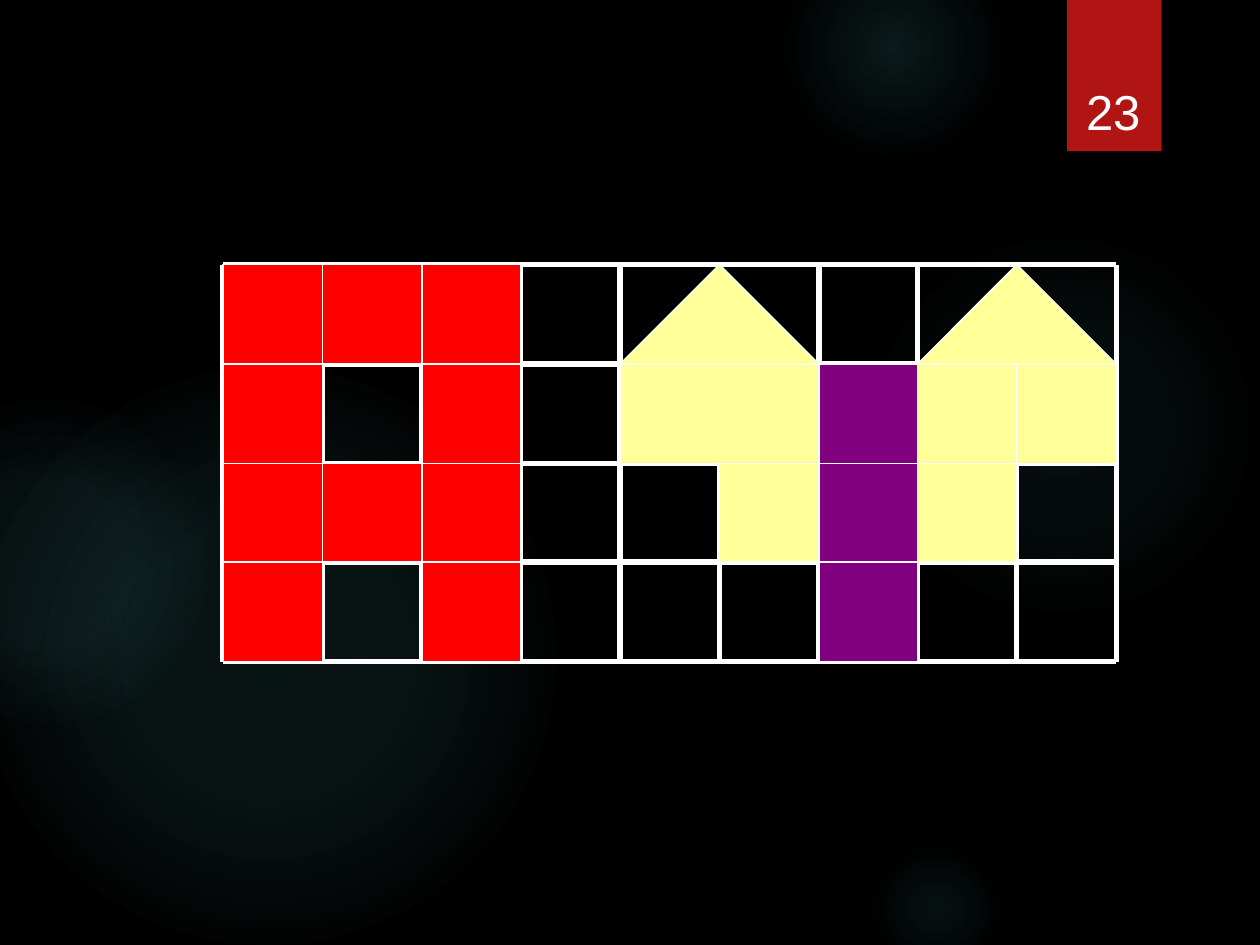
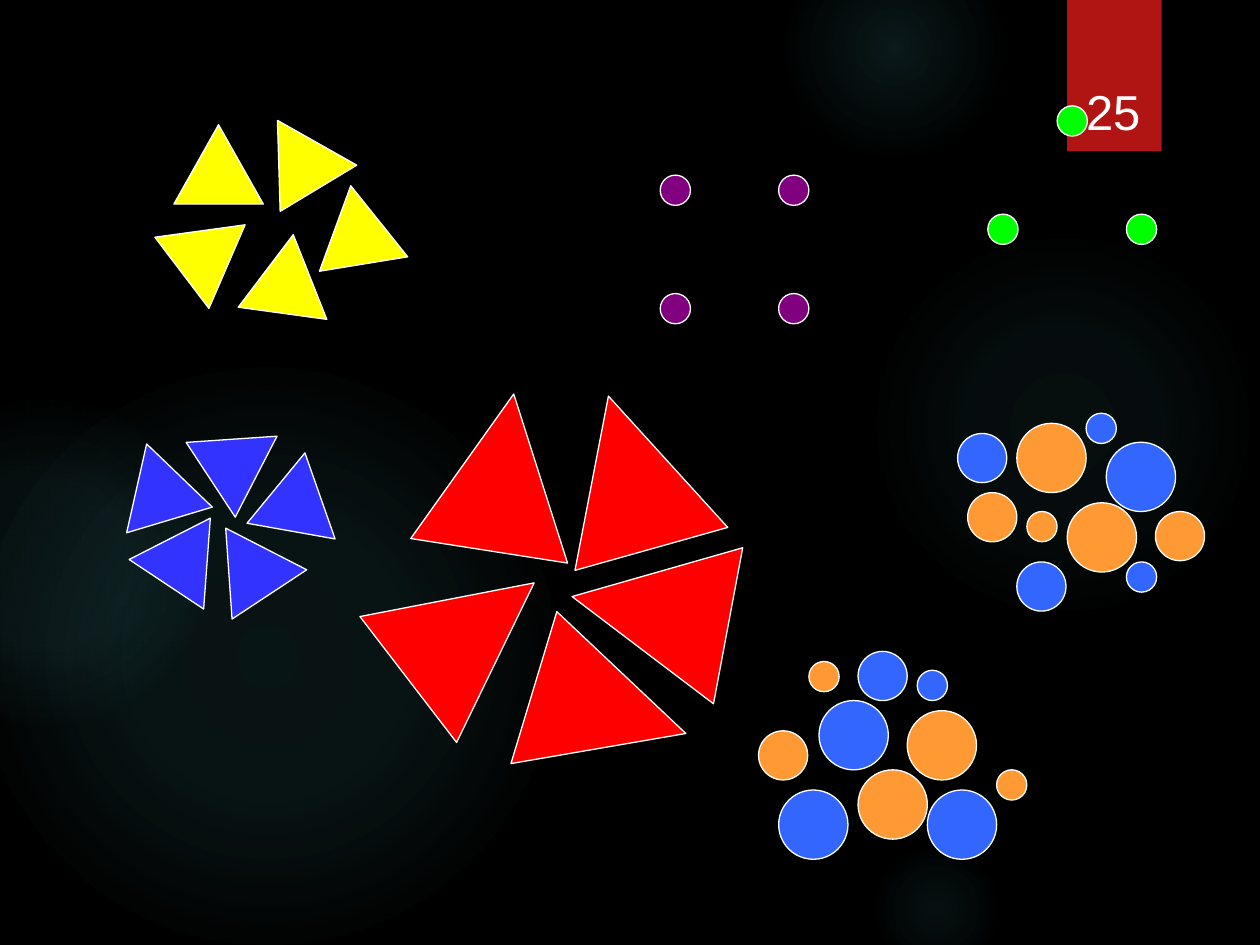
from dataclasses import dataclass
from itertools import product

from lxml import etree
from pptx import Presentation
from pptx.dml.color import RGBColor
from pptx.enum.shapes import MSO_CONNECTOR, MSO_SHAPE as Preset
from pptx.enum.text import MSO_ANCHOR as Anchor, PP_ALIGN as Align
from pptx.oxml import parse_xml
from pptx.oxml.ns import nsdecls, qn
from pptx.shapes.autoshape import Shape
from pptx.slide import Slide
from pptx.util import Emu, Pt

# Scale: 100 px to the inch
EMU_PER_PX = 9144
SLIDE_WIDTH, SLIDE_HEIGHT = 1000, 750

# Colours
BLACK, WHITE = "000000", "FFFFFF"
BANNER_RED, GLOW_TEAL = "B01513", "50B9C1"
RED, YELLOW, PALE_YELLOW = "FF0000", "FFFF00", "FFFF99"
PURPLE, GREEN, ORANGE = "800080", "00FF00", "FF9933"
INDIGO, BLUE = "3333FF", "3366FF"

FONT = "Arial"
THIN, THICK = 0.75, 3


@dataclass(frozen=True)
class Box:
    left: int
    top: int
    width: int
    height: int


@dataclass(frozen=True)
class Glow:
    left: int
    top: int
    diameter: int
    stops: tuple[tuple[int, int], ...]  # position and opacity, percent


@dataclass(frozen=True)
class TriangleFan:
    colour: str
    width: int
    height: int
    blades: tuple[tuple[int, int, float], ...]  # left, top, rotation


@dataclass(frozen=True)
class Dots:
    colour: str
    diameter: int
    places: tuple[tuple[int, int], ...]  # left, top


GLOWS = (
    Glow(689, 183, 308, ((0, 7), (36, 6), (69, 0))),
    Glow(622, -50, 175, ((0, 14), (36, 7), (73, 0))),
    Glow(689, 667, 108, ((0, 9), (36, 5), (66, 0))),
    Glow(-17, 292, 458, ((0, 11), (36, 10), (75, 0))),
    Glow(-92, 317, 258, ((0, 8), (36, 8), (72, 0))),
)
BANNER = Box(847, 0, 75, 120)
NUMBER = Box(849, 32, 69, 84)

# Mosaic slide: one letter for each coloured square
GRID = Box(177, 210, 709, 315)
MOSAIC = (
    "RRR......",
    "R.R.YYPYY",
    "RRR..YPY.",
    "R.R...P..",
)
MOSAIC_COLOURS = {"R": RED, "Y": PALE_YELLOW, "P": PURPLE}
ROOF_COLUMNS = (4, 7)
ROWS, COLUMNS = len(MOSAIC), len(MOSAIC[0])

# Shape groups slide
SMALL, MEDIUM, LARGE = 24, 39, 55
FANS = (
    TriangleFan(INDIGO, 71, 63, (
        (114, 406, 33.6), (90, 351, 343.3), (161, 414, 326.6),
        (201, 359, 10.1), (158, 332, 56.7))),
    TriangleFan(YELLOW, 71, 63, (
        (201, 91, 328.9), (138, 99, 0), (193, 186, 7.8),
        (134, 166, 52.8), (248, 147, 350.7))),
    TriangleFan(RED, 126, 126, (
        (311, 438, 52.5), (335, 312, 8.9), (453, 422, 280.6),
        (437, 312, 344.3), (421, 501, 106.8))),
)
DOT_GROUPS = (
    Dots(GREEN, SMALL, ((784, 170), (894, 170), (839, 84))),
    Dots(PURPLE, SMALL, tuple(product((524, 618), (139, 233)))),
    # Lower cluster
    Dots(BLUE, LARGE, ((650, 556), (736, 627), (618, 627))),
    Dots(ORANGE, LARGE, ((681, 611), (720, 564))),
    Dots(BLUE, MEDIUM, ((681, 517),)),
    Dots(ORANGE, MEDIUM, ((602, 580),)),
    Dots(BLUE, SMALL, ((728, 532),)),
    Dots(ORANGE, SMALL, ((642, 525), (791, 611))),
    # Upper cluster
    Dots(BLUE, SMALL, ((894, 446), (862, 328))),
    Dots(ORANGE, LARGE, ((847, 399), (807, 336))),
    Dots(BLUE, LARGE, ((878, 351),)),
    Dots(ORANGE, MEDIUM, ((917, 406), (768, 391))),
    Dots(BLUE, MEDIUM, ((807, 446), (760, 344))),
    Dots(ORANGE, SMALL, ((815, 406),)),
)


def px(length: int) -> Emu:
    return Emu(length * EMU_PER_PX)


def rgb(colour: str) -> RGBColor:
    return RGBColor.from_string(colour)


def place(box: Box) -> tuple[Emu, Emu, Emu, Emu]:
    return px(box.left), px(box.top), px(box.width), px(box.height)


# Drawing helpers
def add_shape(slide: Slide, preset: Preset, box: Box, fill: str | None,
              outline: str | None = WHITE, rotation: float = 0) -> Shape:
    shape = slide.shapes.add_shape(preset, *place(box))
    shape.shadow.inherit = False
    shape.rotation = rotation
    if fill:
        shape.fill.solid()
        shape.fill.fore_color.rgb = rgb(fill)
    else:
        shape.fill.background()
    if outline:
        shape.line.color.rgb = rgb(outline)
        shape.line.width = Pt(THIN)
    else:
        shape.line.fill.background()
    return shape


def add_text(slide: Slide, box: Box, text: str, *, size: int,
             colour: str = WHITE, align: Align = Align.CENTER,
             anchor: Anchor = Anchor.BOTTOM) -> None:
    frame = slide.shapes.add_textbox(*place(box)).text_frame
    frame.word_wrap = True
    frame.vertical_anchor = anchor
    paragraph = frame.paragraphs[0]
    paragraph.text = text
    paragraph.alignment = align
    paragraph.font.name = FONT
    paragraph.font.size = Pt(size)
    paragraph.font.color.rgb = rgb(colour)


def add_line(slide: Slide, x1: int, y1: int, x2: int, y2: int) -> None:
    line = slide.shapes.add_connector(
        MSO_CONNECTOR.STRAIGHT, px(x1), px(y1), px(x2), px(y2))
    line.line.color.rgb = rgb(WHITE)
    line.line.width = Pt(THICK)
    etree.SubElement(line._element.spPr, qn("a:effectLst"))


def add_glow(slide: Slide, glow: Glow) -> None:
    box = Box(glow.left, glow.top, glow.diameter, glow.diameter)
    properties = add_shape(slide, Preset.OVAL, box, None, None)._element.spPr
    stops = "".join(
        f'<a:gs pos="{position * 1000}"><a:srgbClr val="{GLOW_TEAL}">'
        f'<a:alpha val="{opacity * 1000}"/></a:srgbClr></a:gs>'
        for position, opacity in glow.stops)
    gradient = parse_xml(
        f'<a:gradFill {nsdecls("a")}><a:gsLst>{stops}</a:gsLst>'
        '<a:path path="circle">'
        '<a:fillToRect l="50000" t="50000" r="50000" b="50000"/>'
        '</a:path></a:gradFill>')
    properties.replace(properties.find(qn("a:noFill")), gradient)


# Shared slide frame
def add_slide(presentation: Presentation, number: int) -> Slide:
    slide = presentation.slides.add_slide(presentation.slide_layouts[6])
    slide.background.fill.solid()
    slide.background.fill.fore_color.rgb = rgb(BLACK)
    for glow in GLOWS:
        add_glow(slide, glow)
    add_shape(slide, Preset.RECTANGLE, BANNER, BANNER_RED, None)
    add_text(slide, NUMBER, str(number), size=28)
    return slide


# Mosaic slide
def column_edge(column: int) -> int:
    return GRID.left + round(GRID.width * column / COLUMNS)


def row_edge(row: int) -> int:
    return GRID.top + round(GRID.height * row / ROWS)


def cell_box(row: int, column: int, span: int = 1) -> Box:
    left, top = column_edge(column), row_edge(row)
    return Box(left, top, column_edge(column + span) - left,
               row_edge(row + 1) - top)


def draw_mosaic(slide: Slide) -> None:
    for row in range(ROWS + 1):
        y = row_edge(row)
        add_line(slide, GRID.left, y, GRID.left + GRID.width, y)
    for column in range(COLUMNS + 1):
        x = column_edge(column)
        add_line(slide, x, GRID.top, x, GRID.top + GRID.height)
    for row, letters in enumerate(MOSAIC):
        for column, letter in enumerate(letters):
            if letter in MOSAIC_COLOURS:
                add_shape(slide, Preset.RECTANGLE, cell_box(row, column),
                          MOSAIC_COLOURS[letter])
    for column in ROOF_COLUMNS:
        add_shape(slide, Preset.ISOSCELES_TRIANGLE,
                  cell_box(0, column, span=2), PALE_YELLOW)


# Shape groups slide
def draw_groups(slide: Slide) -> None:
    for fan in FANS:
        for left, top, rotation in fan.blades:
            add_shape(slide, Preset.ISOSCELES_TRIANGLE,
                      Box(left, top, fan.width, fan.height),
                      fan.colour, rotation=rotation)
    for dots in DOT_GROUPS:
        for left, top in dots.places:
            add_shape(slide, Preset.FLOWCHART_CONNECTOR,
                      Box(left, top, dots.diameter, dots.diameter),
                      dots.colour)


def main() -> None:
    presentation = Presentation()
    presentation.slide_width = px(SLIDE_WIDTH)
    presentation.slide_height = px(SLIDE_HEIGHT)
    draw_mosaic(add_slide(presentation, 23))
    draw_groups(add_slide(presentation, 25))
    presentation.save("out.pptx")


if __name__ == "__main__":
    main()
